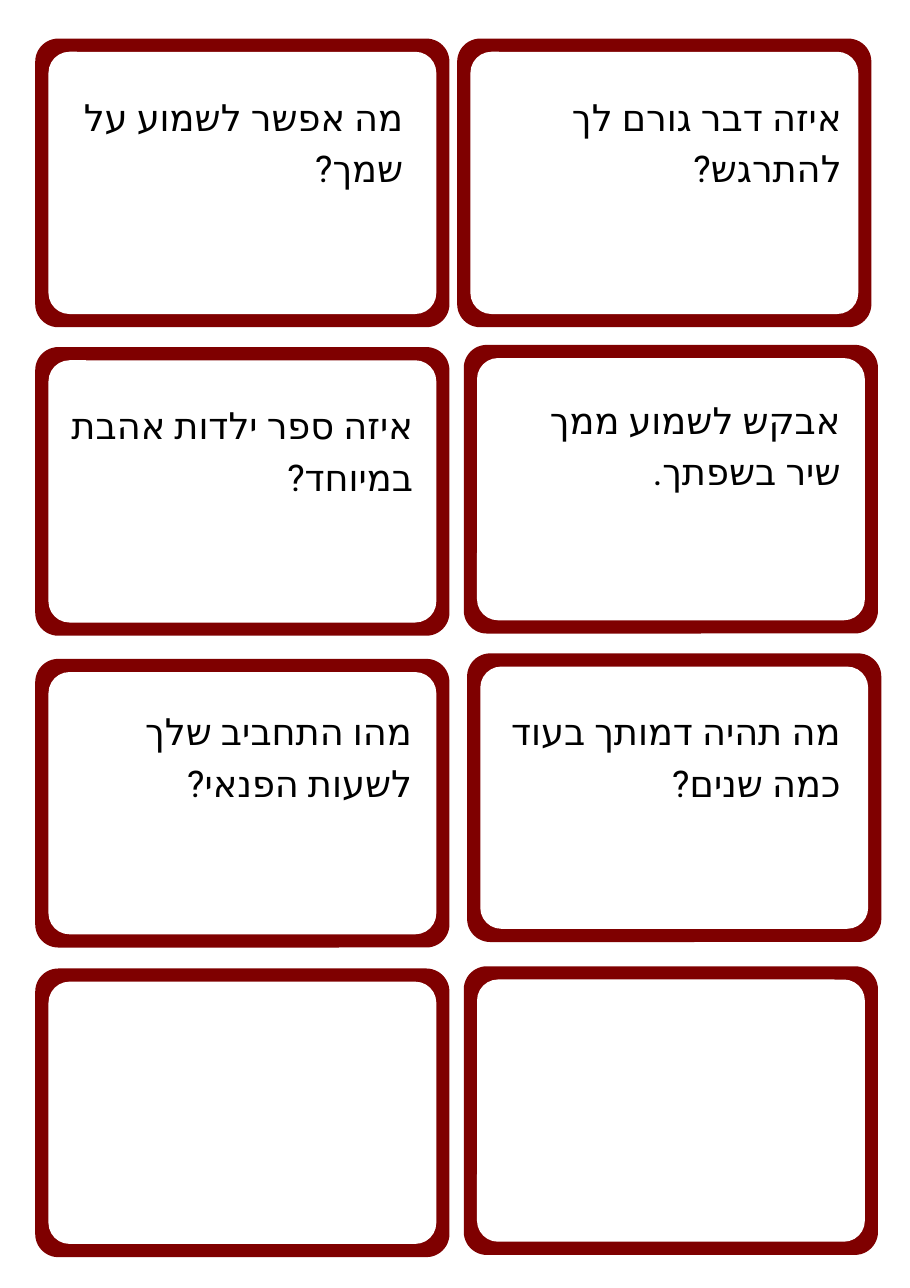
from lxml import etree
from pptx import Presentation
from pptx.dml.color import RGBColor
from pptx.enum import shapes, text
from pptx.oxml.ns import qn
from pptx.util import Inches, Pt

FONT = "Roboto"
WIDE, HIGH, RIM = 3.76, 2.62, 0.12
CARDS = [
    ((4.15, 0.35), "איזה דבר גורם לך להתרגש?", (4.43, 0.79, 3.21, 0.94)),
    ((4.21, 3.13), "אבקש לשמוע ממך שיר בשפתך.", (4.55, 3.54, 3.08, 0.94)),
    ((4.24, 5.93), "מה תהיה דמותך בעוד כמה שנים?", (4.55, 6.37, 3.08, 0.94)),
    ((4.21, 8.77), None, None),
    ((0.32, 0.35), "מה אפשר לשמוע על שמך?", (0.58, 0.79, 3.08, 0.94)),
    ((0.32, 3.15), "איזה ספר ילדות אהבת במיוחד?", (0.58, 3.59, 3.17, 0.89)),
    ((0.32, 5.98), "מהו התחביב שלך לשעות הפנאי?", (0.66, 6.37, 3.08, 0.94)),
    ((0.32, 8.79), None, None),
]


def color(code):
    """Turn a hex string into a colour."""
    return RGBColor.from_string(code)


def assign(item, values):
    """Set attributes from a dict."""
    for name, value in values.items():
        setattr(item, name, value)


def panel(slide, box, code):
    """Draw one plain rounded panel."""
    shape = slide.shapes.add_shape(
        shapes.MSO_SHAPE.ROUNDED_RECTANGLE, *map(Inches, box))
    shape.adjustments[0] = 0.08
    shape.shadow.inherit = False
    shape.fill.solid()
    shape.fill.fore_color.rgb = color(code)
    shape.line.fill.background()


def query(slide, words, box):
    """Write a right-to-left question in its box."""
    frame = slide.shapes.add_textbox(*map(Inches, box)).text_frame
    assign(frame, dict(
        margin_left=0, margin_right=0, margin_top=0, margin_bottom=0,
        word_wrap=True, auto_size=text.MSO_AUTO_SIZE.SHAPE_TO_FIT_TEXT))
    para = frame.paragraphs[0]
    assign(para, dict(alignment=text.PP_ALIGN.RIGHT, line_spacing=Pt(33.6)))
    para._p.get_or_add_pPr().set("rtl", "1")
    run = para.add_run()
    run.text = words
    assign(run.font, dict(name=FONT, size=Pt(24)))
    run.font.color.rgb = color("000000")
    props = run._r.get_or_add_rPr()
    props.set("lang", "he-IL")
    etree.SubElement(props, qn("a:cs")).set("typeface", FONT)


def card(slide, spot, words, box):
    """Draw a rimmed card and its question, if any."""
    left, top = spot
    for inset, code in ((0, "7F0000"), (RIM, "FFFFFF")):
        panel(slide, (left + inset, top + inset,
                      WIDE - 2 * inset, HIGH - 2 * inset), code)
    if words:
        query(slide, words, box)


def main():
    """Build the sheet of question cards."""
    deck = Presentation()
    assign(deck, dict(slide_width=Inches(8.26), slide_height=Inches(11.69)))
    slide = deck.slides.add_slide(deck.slide_layouts[6])
    for spot, words, box in CARDS:
        card(slide, spot, words, box)
    deck.save("out.pptx")


if __name__ == "__main__":
    main()
